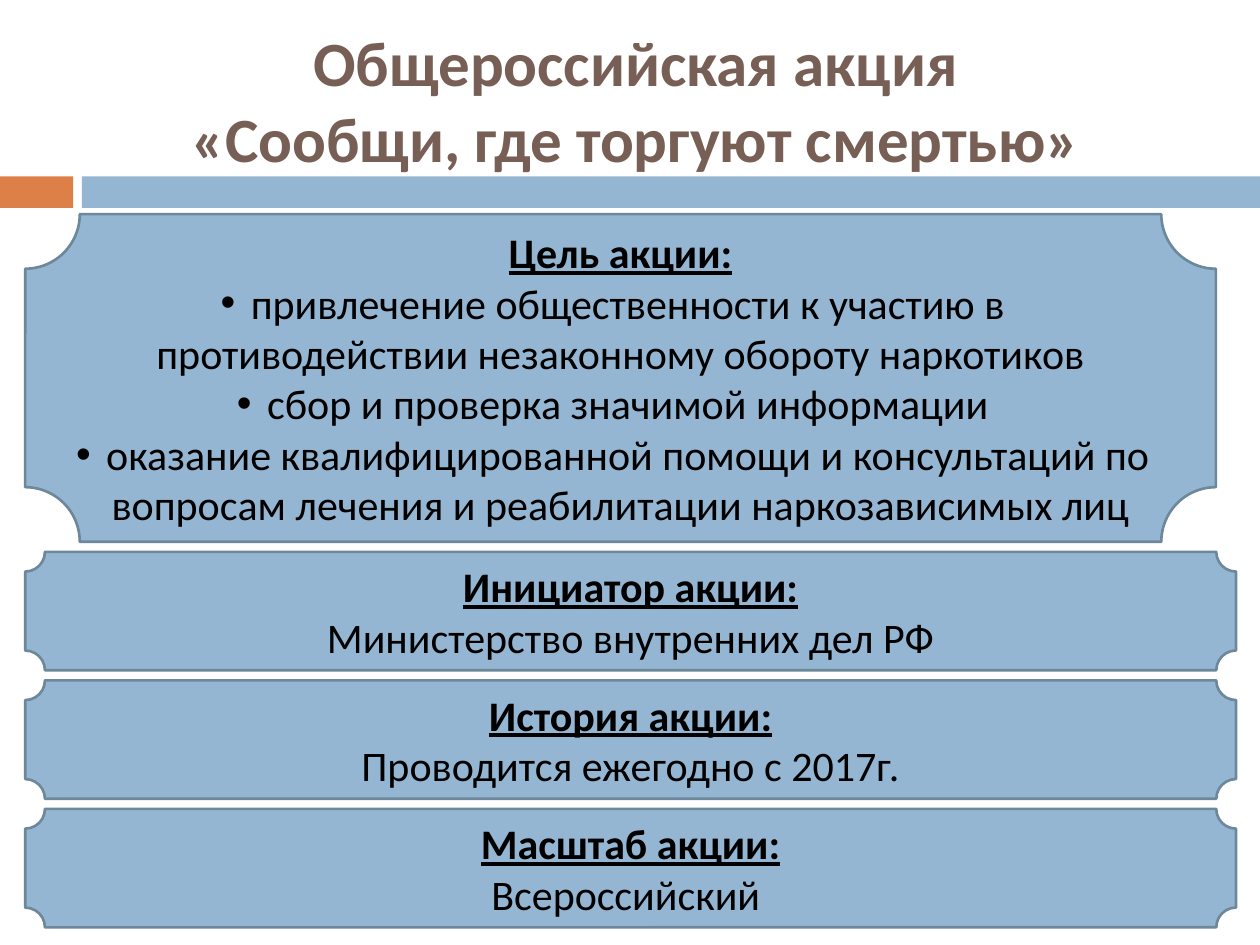
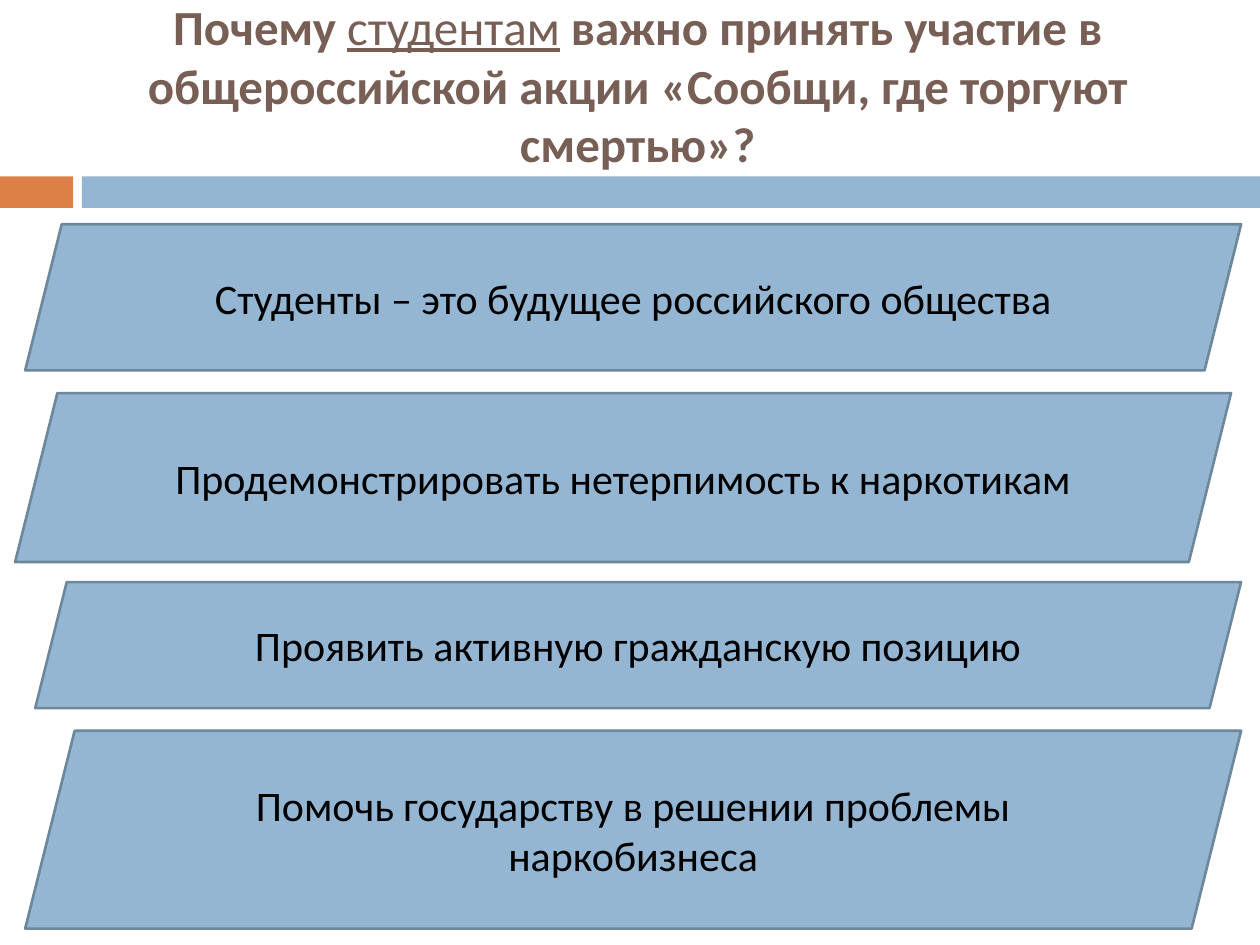
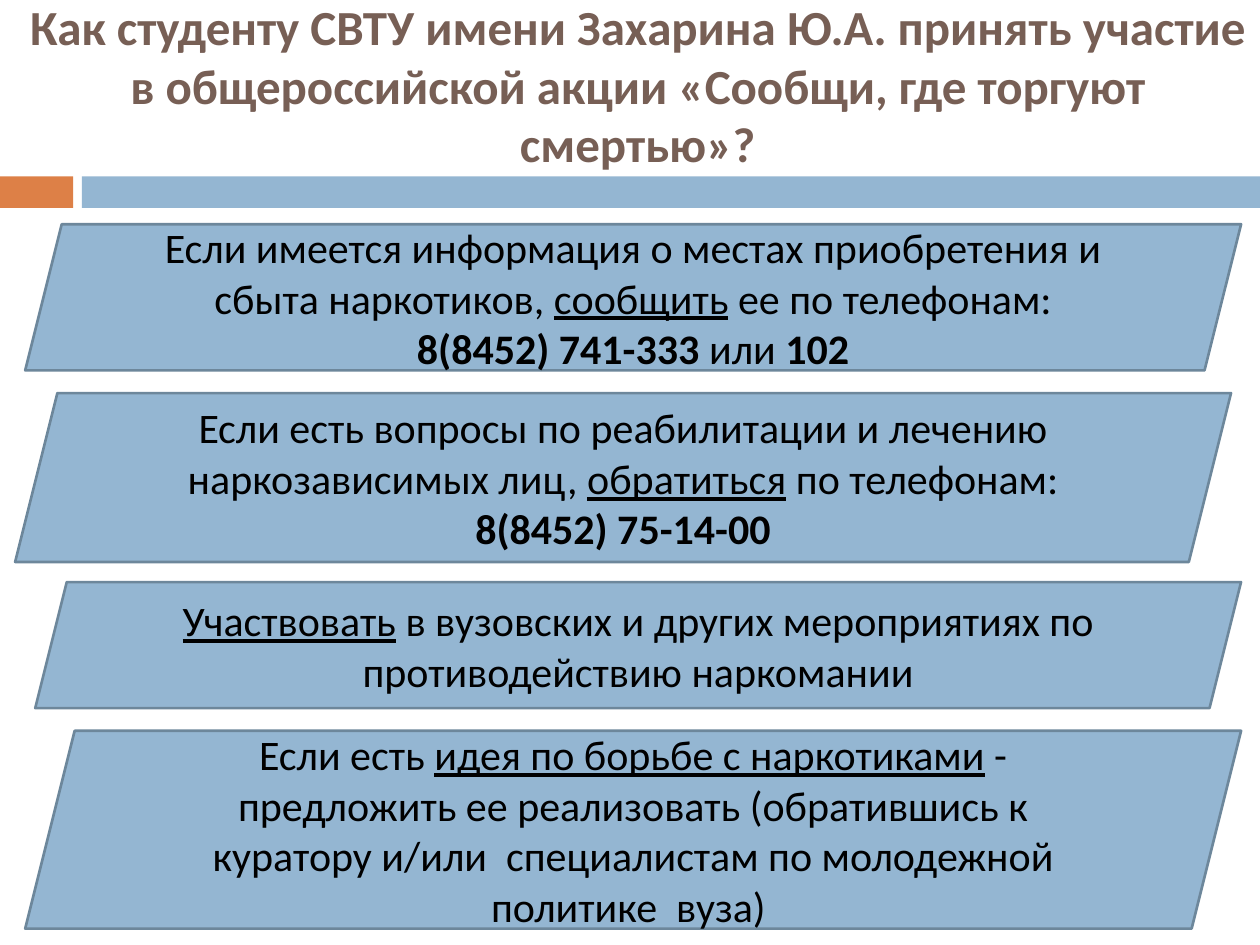
from typing import NamedTuple

from lxml.etree import SubElement
from pptx import Presentation
from pptx.dml.color import RGBColor
from pptx.enum.shapes import MSO_SHAPE as Preset
from pptx.enum.text import MSO_ANCHOR as Anchor, PP_ALIGN as Align
from pptx.oxml.ns import qn
from pptx.util import Inches, Pt

COLORS = {
    "accent": "DD8047",
    "panel": "94B6D2",
    "outline": "6D879B",
    "title": "775F55",
    "text": "000000",
}
FONT = "Calibri"
BODY_SIZE = 24
BULLET_INDENT = Inches(-0.24)


class Box(NamedTuple):
    left: float
    top: float
    width: float
    height: float


class Span(NamedTuple):
    text: str
    bold: bool = False
    underline: bool = False


class Line(NamedTuple):
    spans: list[Span]
    bullet: bool = False


class Panel(NamedTuple):
    box: Box
    lines: list[Line]


class Page(NamedTuple):
    title: list[Span]
    title_box: Box
    title_size: int
    preset: Preset
    panels: list[Panel]


BANDS = [
    (Box(0, 1.4, 0.58, 0.25), "accent"),
    (Box(0.65, 1.4, 9.35, 0.25), "panel"),
]
QUESTION_TITLE_BOX = Box(0.12, 0.13, 9.88, 1.08)
SLANTED_BOXES = [
    Box(0.2, 1.78, 9.65, 1.16),
    Box(0.12, 3.12, 9.65, 1.34),
    Box(0.28, 4.62, 9.57, 1),
    Box(0.2, 5.8, 9.65, 1.57),
]
FACT_TOP, FACT_STEP = 4.38, 1.02


def headed_lines(heading: str, texts: list[str], bullet: bool = False) -> list[Line]:
    heading_line = Line([Span(heading, bold=True, underline=True)])
    return [heading_line] + [Line([Span(text)], bullet) for text in texts]


def slanted_panels(contents: list[list[Span]]) -> list[Panel]:
    return [Panel(box, [Line(spans)]) for box, spans in zip(SLANTED_BOXES, contents)]


GOALS = [
    "привлечение общественности к участию в противодействии незаконному обороту наркотиков",
    "сбор и проверка значимой информации",
    "оказание квалифицированной помощи и консультаций по вопросам лечения "
    "и реабилитации наркозависимых лиц",
]
FACTS = [
    ("Инициатор акции:", "Министерство внутренних дел РФ"),
    ("История акции:", "Проводится ежегодно с 2017г."),
    ("Масштаб акции:", "Всероссийский "),
]
REASONS = [
    "Студенты – это будущее российского общества",
    "Продемонстрировать нетерпимость к наркотикам",
    "Проявить активную гражданскую позицию",
    "Помочь государству в решении проблемы наркобизнеса",
]
WAYS = [
    [
        Span("Если имеется информация о местах приобретения и сбыта наркотиков, "),
        Span("сообщить", underline=True),
        Span(" ее по телефонам: "),
        Span("8(8452) 741-333 ", bold=True),
        Span("или"),
        Span(" 102", bold=True),
    ],
    [
        Span("Если есть вопросы по реабилитации и лечению наркозависимых лиц, "),
        Span("обратиться", underline=True),
        Span(" по телефонам: "),
        Span("8(8452) 75-14-00", bold=True),
    ],
    [
        Span("Участвовать", underline=True),
        Span(" в вузовских и других мероприятиях по противодействию наркомании"),
    ],
    [
        Span("Если есть "),
        Span("идея по борьбе с наркотиками", underline=True),
        Span(" - предложить ее реализовать (обратившись к куратору и/или  "
             "специалистам по молодежной политике  вуза) "),
    ],
]

PAGES = [
    Page(
        [Span("Общероссийская акция\n«Сообщи, где торгуют смертью»", bold=True)],
        Box(0.28, 0.25, 9.53, 1.08), 36, Preset.PLAQUE,
        [Panel(Box(0.2, 1.7, 9.45, 2.6), headed_lines("Цель акции:", GOALS, bullet=True))]
        + [
            Panel(Box(0.2, FACT_TOP + index * FACT_STEP, 9.61, 0.94),
                  headed_lines(heading, [fact]))
            for index, (heading, fact) in enumerate(FACTS)
        ],
    ),
    Page(
        [
            Span("Почему ", bold=True),
            Span("студентам", underline=True),
            Span(" важно принять участие в общероссийской акции "
                 "«Сообщи, где торгуют смертью»?", bold=True),
        ],
        QUESTION_TITLE_BOX, 28, Preset.PARALLELOGRAM,
        slanted_panels([[Span(reason)] for reason in REASONS]),
    ),
    Page(
        [Span("Как студенту СВТУ имени Захарина Ю.А. принять участие в общероссийской "
              "акции «Сообщи, где торгуют смертью»?", bold=True)],
        QUESTION_TITLE_BOX, 28, Preset.PARALLELOGRAM,
        slanted_panels(WAYS),
    ),
]


def rgb(name: str) -> RGBColor:
    return RGBColor.from_string(COLORS[name])


def inches(box: Box) -> list[Inches]:
    return [Inches(length) for length in box]


def add_bullet(paragraph) -> None:
    properties = paragraph._p.get_or_add_pPr()
    properties.set("marL", "0")
    properties.set("indent", str(int(BULLET_INDENT)))
    SubElement(properties, qn("a:buFont")).set("typeface", "Arial")
    SubElement(properties, qn("a:buChar")).set("char", "•")


def write_lines(text_frame, lines: list[Line], size: int, color: str) -> None:
    text_frame.word_wrap = True
    text_frame.vertical_anchor = Anchor.MIDDLE
    for index, line in enumerate(lines):
        paragraph = text_frame.add_paragraph() if index else text_frame.paragraphs[0]
        paragraph.alignment = Align.CENTER
        if line.bullet:
            add_bullet(paragraph)
        for span in line.spans:
            for part_index, part in enumerate(span.text.split("\n")):
                if part_index:
                    paragraph.add_line_break()
                run = paragraph.add_run()
                run.text = part
                run.font.name = FONT
                run.font.size = Pt(size)
                run.font.bold = span.bold
                run.font.underline = span.underline
                run.font.color.rgb = rgb(color)


def add_filled_shape(slide, preset: Preset, box: Box, fill: str):
    shape = slide.shapes.add_shape(preset, *inches(box))
    shape.shadow.inherit = False
    shape.fill.solid()
    shape.fill.fore_color.rgb = rgb(fill)
    shape.line.fill.background()
    return shape


def add_panel(slide, preset: Preset, panel: Panel) -> None:
    shape = add_filled_shape(slide, preset, panel.box, "panel")
    shape.line.color.rgb = rgb("outline")
    shape.line.width = Pt(1.5)
    write_lines(shape.text_frame, panel.lines, BODY_SIZE, "text")


def add_page(presentation, page: Page) -> None:
    slide = presentation.slides.add_slide(presentation.slide_layouts[6])
    for box, fill in BANDS:
        add_filled_shape(slide, Preset.RECTANGLE, box, fill)
    title = slide.shapes.add_textbox(*inches(page.title_box))
    write_lines(title.text_frame, [Line(page.title)], page.title_size, "title")
    for panel in page.panels:
        add_panel(slide, page.preset, panel)


def main() -> None:
    presentation = Presentation()
    presentation.slide_width = Inches(10)
    presentation.slide_height = Inches(7.5)
    for page in PAGES:
        add_page(presentation, page)
    presentation.save("out.pptx")


if __name__ == "__main__":
    main()
